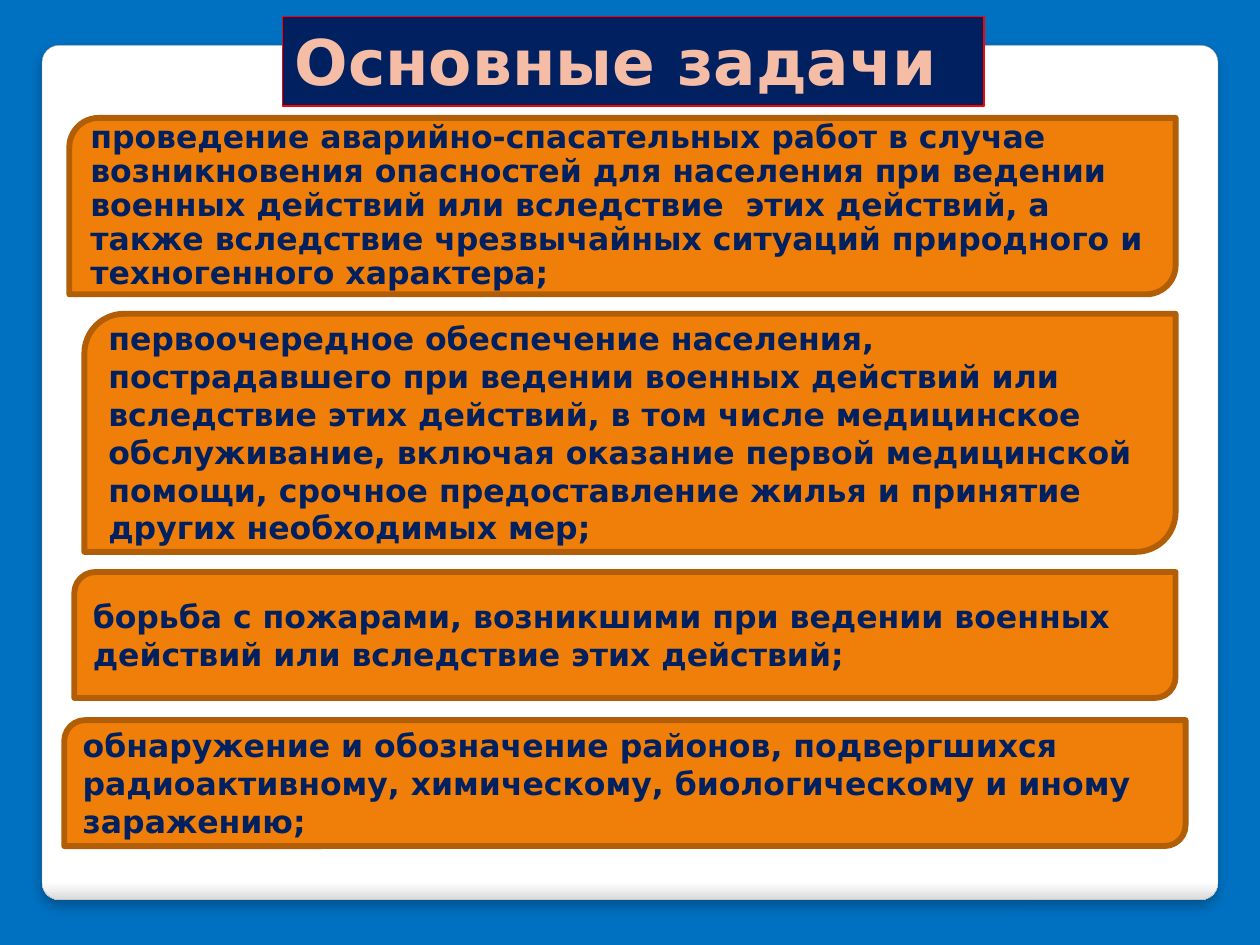
import pptx
import pptx.util
import pptx.dml.color
import pptx.enum.shapes
import pptx.enum.text
import pptx.oxml
import pptx.oxml.ns

Pt = pptx.util.Pt
SHAPE = pptx.enum.shapes.MSO_SHAPE
ANCHOR = pptx.enum.text.MSO_ANCHOR

# Content: each task has its text, (left, top, width, height) and line spacing
HEADING = "Основные задачи"
HEADING_BOX = (161.3, 9.4, 401, 51.1)
PANEL_BOX = (24, 25.9, 672, 488.2)
TASKS = [
    ("проведение аварийно-спасательных работ в случае возникновения опасностей "
     "для населения при ведении военных действий или вследствие  этих действий, "
     "а также вследствие чрезвычайных ситуаций природного и техногенного характера;",
     (39.6, 67.4, 632.2, 100.8), 0.9),
    ("первоочередное обеспечение населения, пострадавшего при ведении военных "
     "действий или вследствие этих действий, в том числе медицинское обслуживание, "
     "включая оказание первой медицинской помощи, срочное предоставление жилья "
     "и принятие других необходимых мер;",
     (48.2, 179.3, 623.6, 136.1), 1.0),
    ("борьба с пожарами, возникшими при ведении военных действий "
     "или вследствие этих действий;",
     (42.5, 326.9, 629.3, 72), 1.0),
    ("обнаружение и обозначение районов, подвергшихся радиоактивному, "
     "химическому, биологическому и иному заражению;",
     (36.7, 411.5, 640.8, 72), 1.0),
]

THEME = {
    "font": "DejaVu Sans", "heading_size": 36, "task_size": 18,
    "background": "0070C0", "panel": "FFFFFF", "panel_edge": "DADADA",
    "panel_line": "A4A4A4", "navy": "002060", "red": "FF0000",
    "heading_text": "F5BDA6", "orange": "F07F09", "brown": "B25E07",
}

PANEL_SHADOW = (
    '<a:effectLst %s><a:outerShdw blurRad="76200" dist="50800" dir="5400000" '
    'algn="tl" rotWithShape="0"><a:srgbClr val="000000"><a:alpha val="25000"/>'
    '</a:srgbClr></a:outerShdw></a:effectLst>' % pptx.oxml.ns.nsdecls("a"))


def color(name):
    return pptx.dml.color.RGBColor.from_string(THEME[name])


def add_box(slide, kind, box, fill, line, line_width):
    shape = slide.shapes.add_shape(kind, *(Pt(v) for v in box))
    shape.shadow.inherit = False
    shape.fill.solid()
    shape.fill.fore_color.rgb = color(fill)
    shape.line.color.rgb = color(line)
    shape.line.width = Pt(line_width)
    return shape


def write(shape, text, size, text_color, anchor, spacing=1.0):
    frame = shape.text_frame
    frame.word_wrap = True
    frame.vertical_anchor = anchor
    paragraph = frame.paragraphs[0]
    paragraph.text = text
    paragraph.alignment = pptx.enum.text.PP_ALIGN.LEFT
    paragraph.line_spacing = spacing
    paragraph.font.name = THEME["font"]
    paragraph.font.size = Pt(THEME[size])
    paragraph.font.bold = True
    paragraph.font.color.rgb = color(text_color)


def add_panel(slide):
    panel = add_box(slide, SHAPE.ROUNDED_RECTANGLE, PANEL_BOX, "panel", "panel_line", 0.16)
    panel.adjustments[0] = 0.02
    # White down to a thin grey lower edge
    panel.fill.gradient()
    panel.fill.gradient_angle = 270
    edge_stops = ((0.98, "panel"), (1.0, "panel_edge"))
    for stop, (position, name) in zip(panel.fill.gradient_stops, edge_stops):
        stop.position = position
        stop.color.rgb = color(name)
    properties = panel.element.spPr
    flat = properties.find(pptx.oxml.ns.qn("a:effectLst"))
    properties.replace(flat, pptx.oxml.parse_xml(PANEL_SHADOW))


def main():
    deck = pptx.Presentation()
    deck.slide_width, deck.slide_height = Pt(720), Pt(540)
    slide = deck.slides.add_slide(deck.slide_layouts[6])
    slide.background.fill.solid()
    slide.background.fill.fore_color.rgb = color("background")

    add_panel(slide)

    # Heading
    heading = add_box(slide, SHAPE.RECTANGLE, HEADING_BOX, "navy", "red", 0.75)
    write(heading, HEADING, "heading_size", "heading_text", ANCHOR.TOP)

    # Tasks
    for text, box, spacing in TASKS:
        task = add_box(slide, SHAPE.ROUND_2_DIAG_RECTANGLE, box, "orange", "brown", 3.35)
        write(task, text, "task_size", "navy", ANCHOR.MIDDLE, spacing)

    deck.save("out.pptx")


if __name__ == "__main__":
    main()
